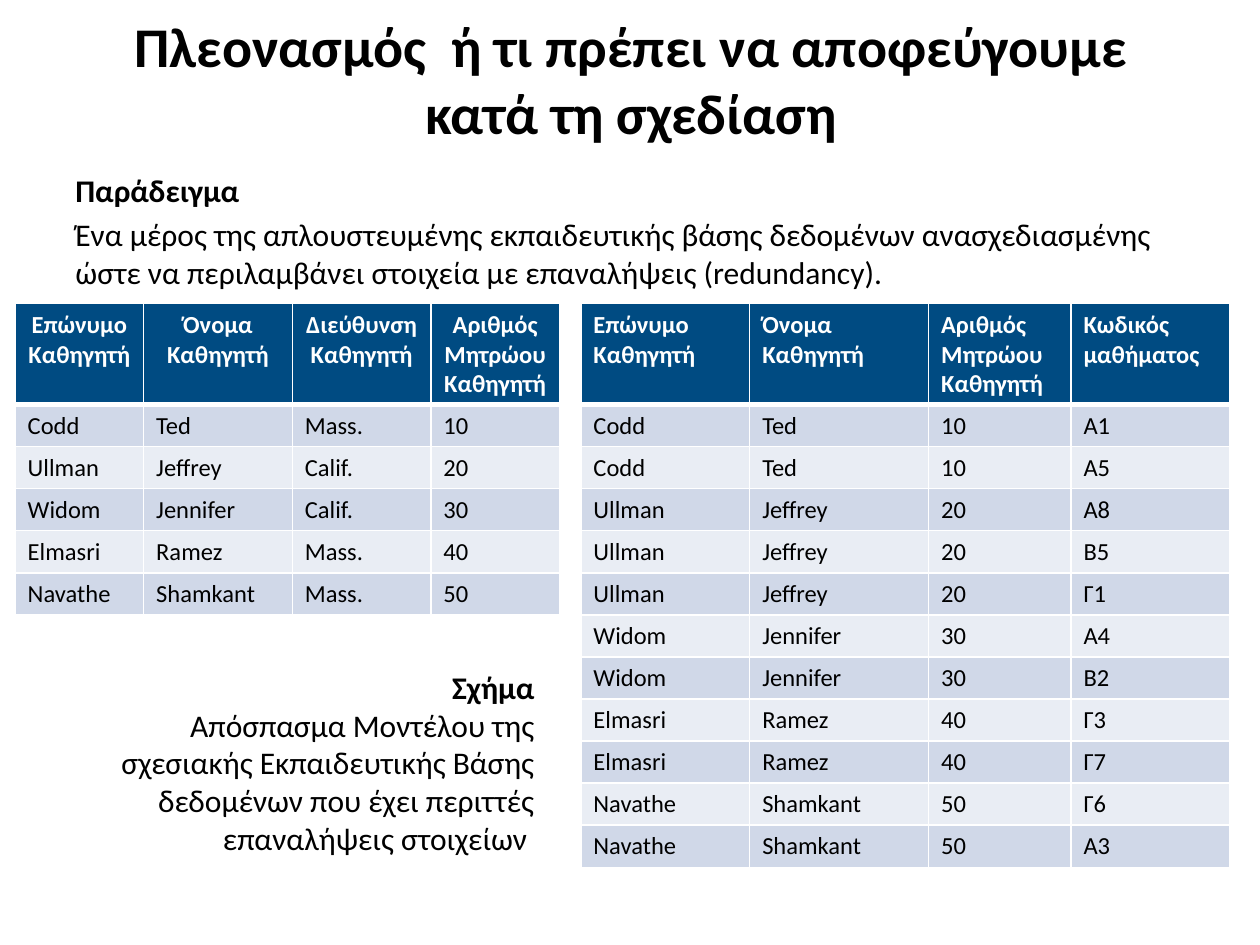
import pptx
import pptx.dml.color
import pptx.enum.text
import pptx.oxml.ns
import pptx.util
from lxml import etree

COLORS = {"text": "000000", "paper": "FFFFFF", "header": "004B82",
          "odd": "D0D8E8", "even": "E9EDF4"}
ALIGN = pptx.enum.text.PP_ALIGN
ANCHOR = pptx.enum.text.MSO_ANCHOR
COLUMNS, ROWS = 100, 75

PROFESSOR_HEADS = ["Επώνυμο Καθηγητή", "Όνομα Καθηγητή",
                   "Διεύθυνση Καθηγητή", "Αριθμός Μητρώου Καθηγητή"]
PROFESSORS = [
    ["Codd", "Ted", "Mass.", "10"],
    ["Ullman", "Jeffrey", "Calif.", "20"],
    ["Widom", "Jennifer", "Calif.", "30"],
    ["Elmasri", "Ramez", "Mass.", "40"],
    ["Navathe", "Shamkant", "Mass.", "50"],
]
COURSE_HEADS = ["Επώνυμο Καθηγητή", "Όνομα Καθηγητή",
                "Αριθμός Μητρώου Καθηγητή", "Κωδικός μαθήματος"]
COURSES = {
    "10": ["Α1", "Α5"],
    "20": ["Α8", "Β5", "Γ1"],
    "30": ["Α4", "B2"],
    "40": ["Γ3", "Γ7"],
    "50": ["Γ6", "Α3"],
}


def color(name):
    return pptx.dml.color.RGBColor.from_string(COLORS[name])


class SlideBuilder:
    font = "Calibri"

    def __init__(self, deck):
        self.deck = deck
        self.page = deck.slides.add_slide(deck.slide_layouts[6])

    def place(self, left, top, width, height):
        """Turn grid columns and rows into slide lengths."""
        across = self.deck.slide_width / COLUMNS
        down = self.deck.slide_height / ROWS
        return [round(left * across), round(top * down),
                round(width * across), round(height * down)]

    def style(self, para, size, bold=False, tone="text", align=ALIGN.LEFT):
        para.alignment = align
        para.font.name = self.font
        para.font.size = pptx.util.Pt(size)
        para.font.bold = bold
        para.font.color.rgb = color(tone)

    def text(self, area, lines, size, align=ALIGN.LEFT, anchor=ANCHOR.TOP, before=0):
        """Add a text box whose first line is bold; return its paragraphs."""
        frame = self.page.shapes.add_textbox(*self.place(*area)).text_frame
        frame.word_wrap = True
        frame.vertical_anchor = anchor
        frame.text = "\n".join(lines)
        for index, para in enumerate(frame.paragraphs):
            self.style(para, size, bold=index == 0, align=align)
            para.space_before = pptx.util.Pt(before)
        return frame.paragraphs

    def borders(self, cell, widths):
        properties = cell._tc.get_or_add_tcPr()
        for side, width in zip("LRTB", widths):
            line = etree.SubElement(properties, pptx.oxml.ns.qn(f"a:ln{side}"),
                                    w=str(pptx.util.Pt(width)))
            fill = etree.SubElement(line, pptx.oxml.ns.qn("a:solidFill"))
            etree.SubElement(fill, pptx.oxml.ns.qn("a:srgbClr"), val=COLORS["paper"])

    def table(self, left, top, widths, heads, records, head_align):
        head_height, row_height = 8, 3.3
        area = self.place(left, top, sum(widths), head_height + row_height * len(records))
        table = self.page.shapes.add_table(len(records) + 1, len(heads), *area).table
        for column, width in zip(table.columns, widths):
            column.width = self.place(0, 0, width, 0)[2]
        for number, values in enumerate([heads] + records):
            is_head = number == 0
            height = head_height if is_head else row_height
            table.rows[number].height = self.place(0, 0, 0, height)[3]
            band = "header" if is_head else ("even", "odd")[number % 2]
            for column, value in enumerate(values):
                cell = table.cell(number, column)
                cell.text = value
                self.style(cell.text_frame.paragraphs[0], 14, is_head,
                           "paper" if is_head else "text",
                           head_align if is_head else ALIGN.LEFT)
                self.borders(cell, (1, 1, 3 if number == 1 else 1, 3 if is_head else 1))
                cell.fill.solid()
                cell.fill.fore_color.rgb = color(band)


def main():
    deck = pptx.Presentation()
    deck.slide_width = pptx.util.Inches(10)
    deck.slide_height = pptx.util.Inches(7.5)
    slide = SlideBuilder(deck)

    slide.text((5.1, 1.3, 90, 9.9),
               ["Πλεονασμός  ή τι πρέπει να αποφεύγουμε κατά τη σχεδίαση"],
               32, ALIGN.CENTER, ANCHOR.MIDDLE)
    slide.text((5, 13.1, 90, 11.8),
               ["Παράδειγμα",
                "Ένα μέρος της απλουστευμένης εκπαιδευτικής βάσης δεδομένων "
                "ανασχεδιασμένης ώστε να περιλαμβάνει στοιχεία με επαναλήψεις (redundancy)."],
               18, before=3.6)

    slide.table(1.2, 24.1, [10.2, 11.8, 11, 10.2], PROFESSOR_HEADS, PROFESSORS, ALIGN.CENTER)
    teaching = [[surname, name, number, course]
                for surname, name, _, number in PROFESSORS
                for course in COURSES[number]]
    slide.table(46.1, 24.1, [13.4, 14.2, 11.3, 12.6], COURSE_HEADS, teaching, ALIGN.LEFT)

    caption = slide.text((5.7, 52.5, 39.4, 16.2),
                         ["Σχήμα",
                          "Απόσπασμα Μοντέλου της σχεσιακής Εκπαιδευτικής Βάσης "
                          "δεδομένων που έχει περιττές επαναλήψεις στοιχείων "],
                         18, ALIGN.RIGHT)
    caption[0]._p.get_or_add_pPr().set("marR", str(pptx.util.Inches(0.17)))

    deck.save("out.pptx")


if __name__ == "__main__":
    main()
